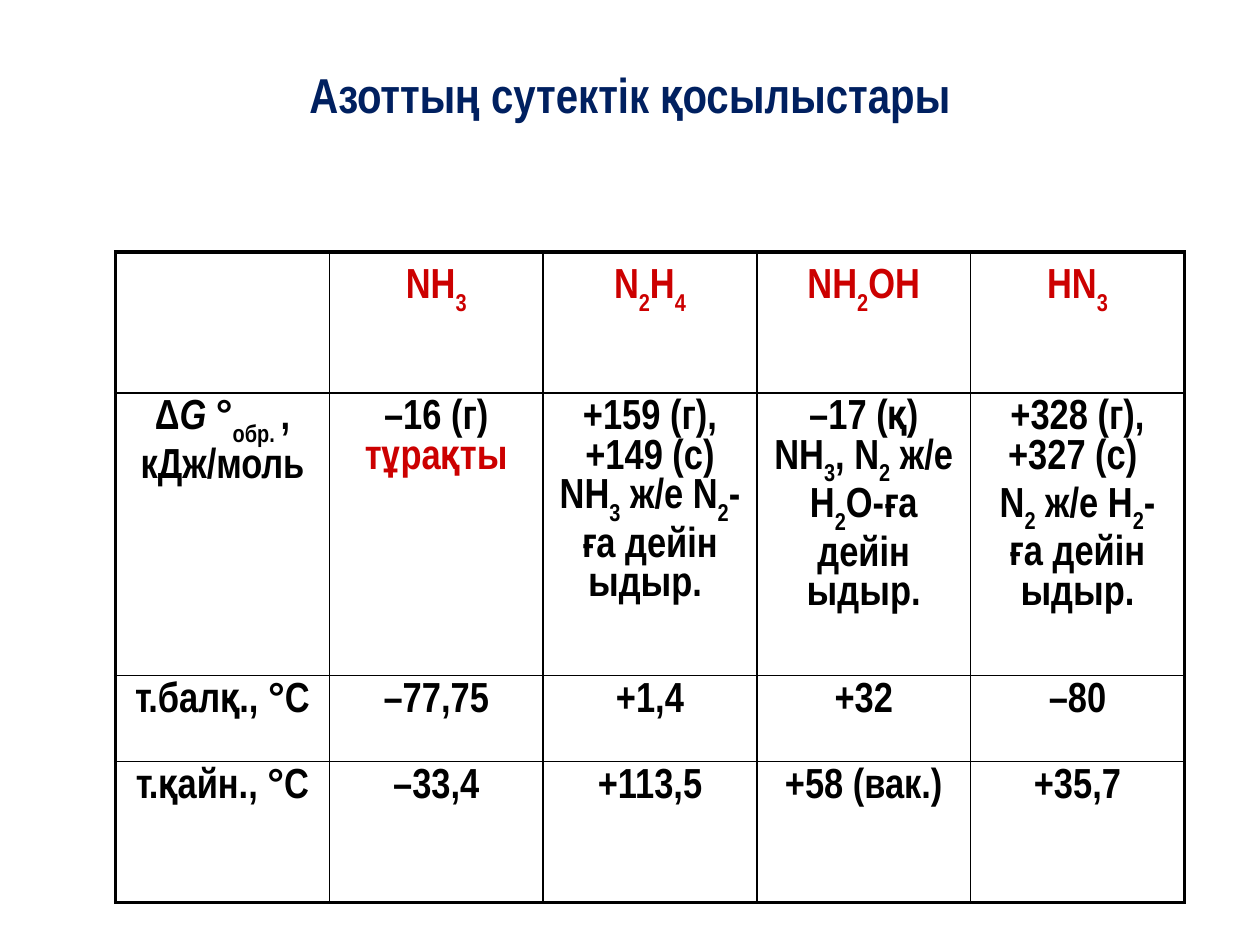
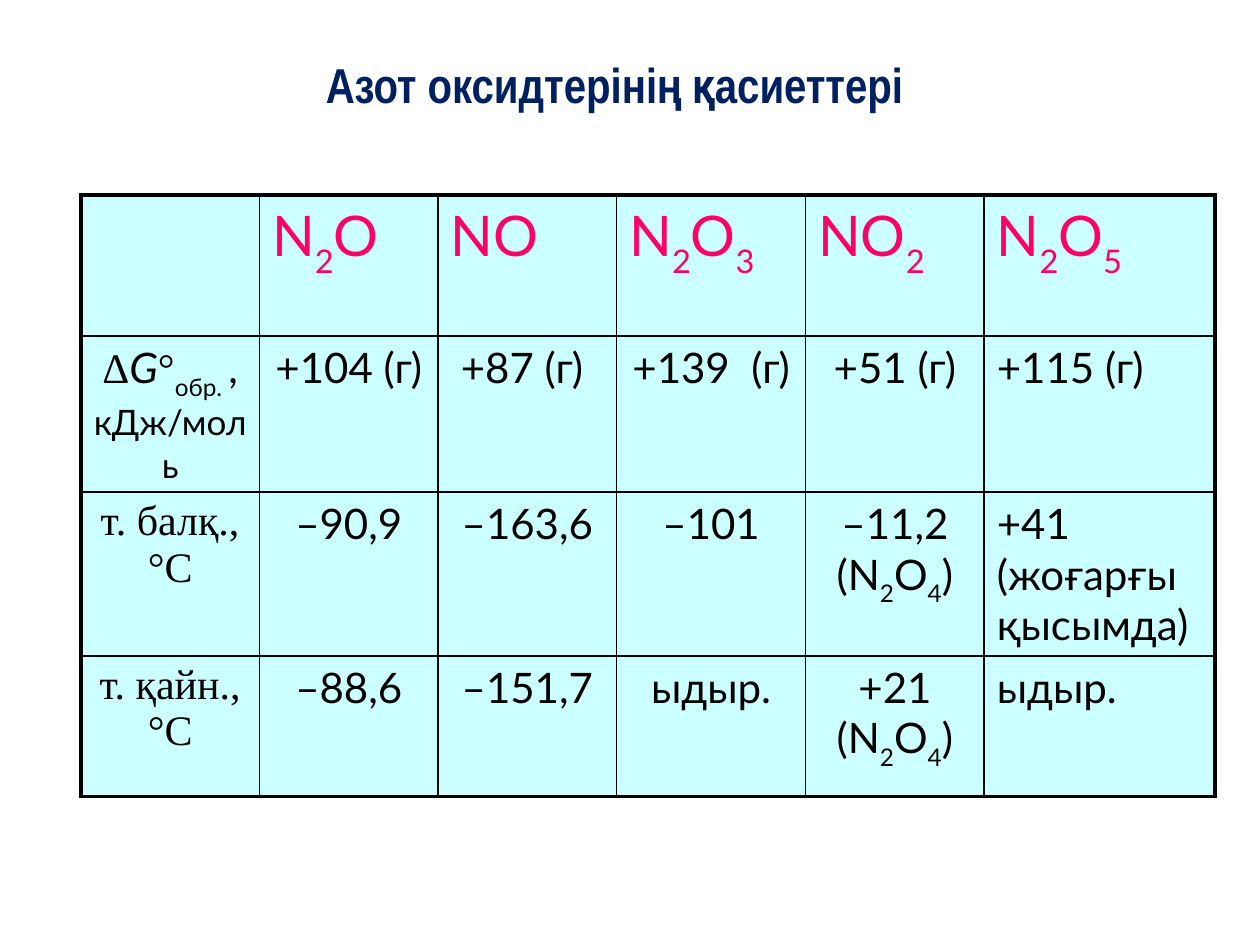
from lxml.etree import SubElement
from pptx import Presentation
from pptx.dml.color import RGBColor
from pptx.enum.text import MSO_ANCHOR as ANCHOR, PP_ALIGN as ALIGN
from pptx.oxml.ns import qn
from pptx.util import Cm, Pt

NAVY = RGBColor(0x00, 0x20, 0x60)
BLACK = RGBColor(0x00, 0x00, 0x00)
RED = RGBColor(0xCC, 0x00, 0x00)
PINK = RGBColor(0xFF, 0x00, 0x66)
AQUA = RGBColor(0xCC, 0xFF, 0xFF)
NARROW, LATO, TIMES = "Arial Narrow", "Lato", "Times New Roman"
THIN, THICK = Pt(1), Pt(2.25)

TITLE = {"name": NARROW, "size": Pt(28), "bold": True, "color": NAVY}
HYDRIDE = {"name": NARROW, "size": Pt(24), "bold": True, "color": BLACK}
OXIDE = {"name": LATO, "size": Pt(24), "color": BLACK}
SERIF = {"name": TIMES}


def add_runs(p, text, fmt):
    """Add text to a paragraph; parts between underscores are subscripts."""
    for i, part in enumerate(text.split("_")):
        if not part:
            continue
        r = p.add_run()
        r.text = part
        for key, value in fmt.items():
            if key == "color":
                r.font.color.rgb = value
            else:
                setattr(r.font, key, value)
        if i % 2:
            r._r.get_or_add_rPr().set("baseline", "-30000")


def add_border(cell, side, width):
    ln = SubElement(cell._tc.get_or_add_tcPr(), qn(f"a:ln{side}"), w=str(width))
    fill = SubElement(ln, qn("a:solidFill"))
    SubElement(fill, qn("a:srgbClr"), val=str(BLACK))


# A cell is marked-up text, or a list of (text, format changes) for mixed runs
slides = [
    {
        "title": "Азоттың сутектік қосылыстары",
        "title_box": (1.9, 0.73, 21.6, 2.34),
        "origin": (2.33, 5.08),
        "cols": [4.31] * 5,
        "rows": [2.84, 4.32, 1.73, 2.84],
        "body": HYDRIDE,
        "head": {"color": RED},
        "label": {},
        "head_spacing": 1.2,
        "left_cells": lambda row, col: False,
        "fill": None,
        "cells": [
            ["", "NH_3_", "N_2_H_4_", "NH_2_OH", "HN_3_"],
            [
                [("Δ", {}), ("G ", {"italic": True}), ("°_обр. _, кДж/моль", {})],
                [("–16 (г) ", {}), ("тұрақты", {"color": RED})],
                "+159 (г), +149 (с) NH_3_ ж/е N_2_-ға дейін ыдыр. ",
                "–17 (қ) NH_3_, N_2_ ж/е H_2_O-ға дейін ыдыр.",
                "+328 (г), +327 (с) \nN_2_ ж/е H_2_-ға дейін ыдыр.",
            ],
            ["т.балқ., °С", "–77,75", "+1,4", "+32", "–80"],
            ["т.қайн., °С", "–33,4", "+113,5", "+58 (вак.)", "+35,7"],
        ],
    },
    {
        "title": "Азот оксидтерінің қасиеттері ",
        "title_box": (1.7, 0.86, 21.6, 1.68),
        "origin": (1.63, 3.93),
        "cols": [3.6, 3.6, 3.6, 3.81, 3.6, 4.65],
        "rows": [2.84, 2.97, 3.12, 2.84],
        "body": OXIDE,
        "head": {"size": Pt(32), "color": PINK},
        "label": SERIF,
        "head_spacing": None,
        "left_cells": lambda row, col: row == 0 or col == 5,
        "fill": AQUA,
        "cells": [
            ["", "N_2_O", "NO", "N_2_O_3_", "NO_2_", "N_2_O_5_"],
            [
                [("Δ", SERIF), ("G", {"name": LATO, "italic": True}), ("°", SERIF),
                 ("_обр. _, ", {"name": LATO}),
                 ("кДж/моль", {"name": LATO, "size": Pt(20)})],
                "+104 (г)", "+87 (г) ", "+139  (г)", "+51 (г)", "+115 (г)",
            ],
            ["т. балқ., °С", "–90,9", "–163,6", "–101", "–11,2 (N_2_O_4_)",
             "+41 (жоғарғы қысымда)"],
            ["т. қайн., °С", "–88,6", "–151,7", "ыдыр.", "+21 (N_2_O_4_)", "ыдыр."],
        ],
    },
]

prs = Presentation()
prs.slide_width, prs.slide_height = Cm(25.4), Cm(19.05)

for data in slides:
    s = prs.slides.add_slide(prs.slide_layouts[6])

    # Title
    tf = s.shapes.add_textbox(*[Cm(v) for v in data["title_box"]]).text_frame
    tf.word_wrap = True
    tf.vertical_anchor = ANCHOR.MIDDLE
    tf.paragraphs[0].alignment = ALIGN.CENTER
    add_runs(tf.paragraphs[0], data["title"], TITLE)

    # Table grid
    cols, rows = data["cols"], data["rows"]
    left, top = data["origin"]
    table = s.shapes.add_table(len(rows), len(cols), Cm(left), Cm(top),
                               Cm(sum(cols)), Cm(sum(rows))).table
    table.first_row = table.horz_banding = False
    for column, width in zip(table.columns, cols):
        column.width = Cm(width)
    for row, height in zip(table.rows, rows):
        row.height = Cm(height)

    for i, row_cells in enumerate(data["cells"]):
        for j, content in enumerate(row_cells):
            cell = table.cell(i, j)

            # Thick outer frame, thin inner lines
            outer = {"L": j == 0, "R": j == len(cols) - 1,
                     "T": i == 0, "B": i == len(rows) - 1}
            for side, is_outer in outer.items():
                add_border(cell, side, THICK if is_outer else THIN)
            if data["fill"] is None:
                cell.fill.background()
            else:
                cell.fill.solid()
                cell.fill.fore_color.rgb = data["fill"]

            # Cell text
            fmt = dict(data["body"])
            if i == 0:
                fmt.update(data["head"])
            elif j == 0:
                fmt.update(data["label"])
            if isinstance(content, str):
                paragraphs = [[(line, {})] for line in content.split("\n")]
            else:
                paragraphs = [content]
            tf = cell.text_frame
            for k, parts in enumerate(paragraphs):
                p = tf.add_paragraph() if k else tf.paragraphs[0]
                before = SubElement(p._p.get_or_add_pPr(), qn("a:spcBef"))
                SubElement(before, qn("a:spcPct"), val="20000")
                p.alignment = ALIGN.LEFT if data["left_cells"](i, j) else ALIGN.CENTER
                if i == 0 and data["head_spacing"]:
                    p.line_spacing = data["head_spacing"]
                for text, changes in parts:
                    add_runs(p, text, {**fmt, **changes})

prs.save("out.pptx")
